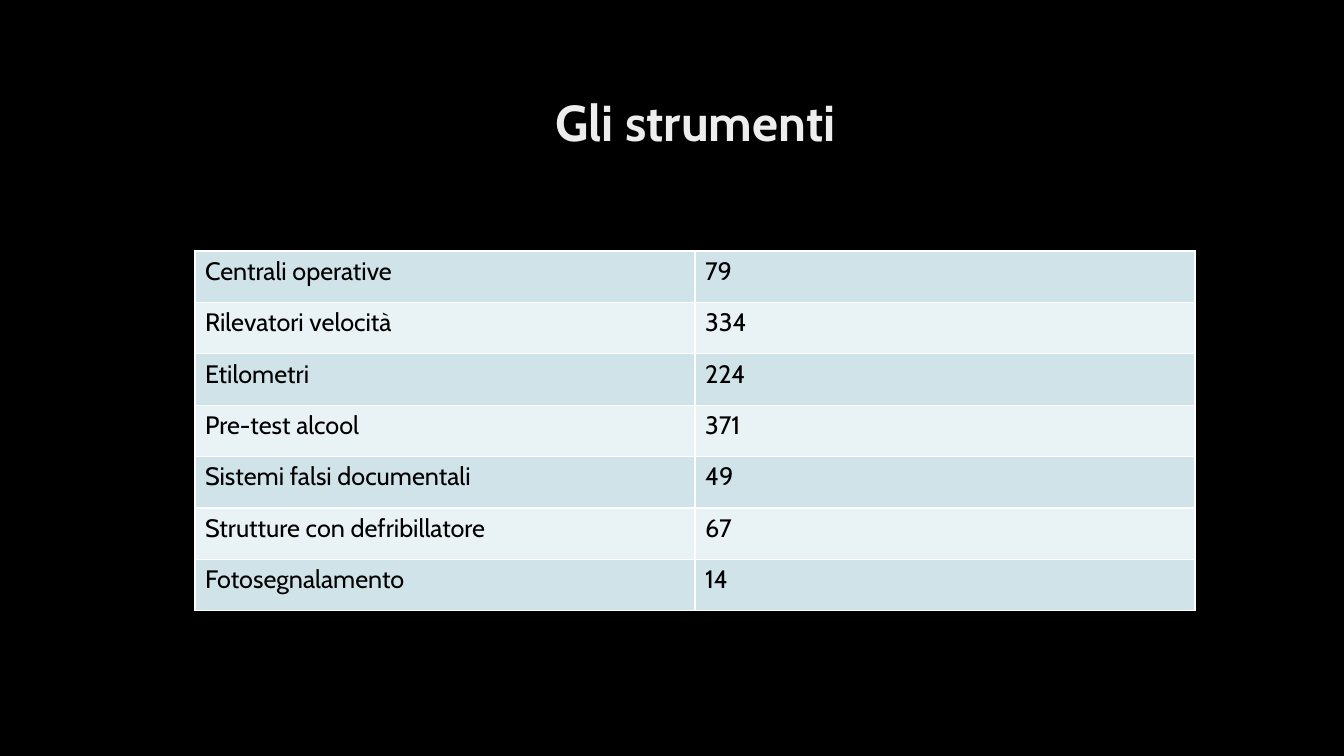
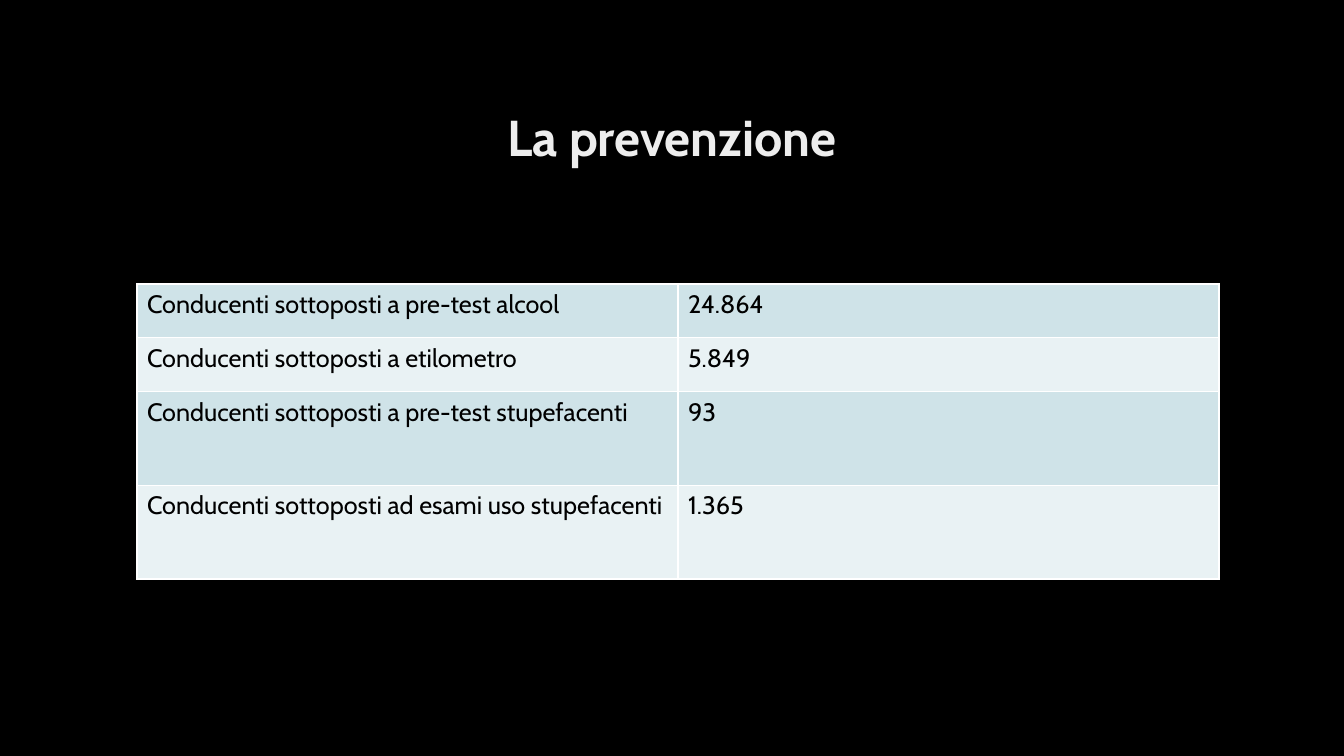
"""Two slides, each with a centred title over a banded two-column table."""
from lxml import etree
from pptx import Presentation
from pptx.dml.color import RGBColor
from pptx.enum.text import MSO_ANCHOR, PP_ALIGN
from pptx.oxml.ns import qn
from pptx.util import Emu, Pt

CENTER = PP_ALIGN.CENTER
TOP = MSO_ANCHOR.TOP
FONT = "Cabin"
COLORS = {
    "background": "000000",
    "title": "EDEDED",
    "text": "000000",
    "border": "FFFFFF",
    "band_dark": "CFE3E8",
    "band_light": "E9F2F4",
}
BANDS = ("band_dark", "band_light")
SLIDES = [
    {
        "title": "Gli strumenti",
        "title_box": (511, 93, 369, 66),
        "table_box": (195, 251, 1000, 360),
        "row_shares": [1] * 7,
        "rows": [
            ("Centrali operative", "79"),
            ("Rilevatori velocità", "334"),
            ("Etilometri", "224"),
            ("Pre-test alcool", "371"),
            ("Sistemi falsi documentali", "49"),
            ("Strutture con defribillatore", "67"),
            ("Fotosegnalamento", "14"),
        ],
    },
    {
        "title": "La prevenzione",
        "title_box": (336, 108, 672, 66),
        "table_box": (137, 284, 1082, 295),
        "row_shares": [54, 54, 94, 94],
        "rows": [
            ("Conducenti sottoposti a pre-test alcool", "24.864"),
            ("Conducenti sottoposti a etilometro", "5.849"),
            ("Conducenti sottoposti a pre-test stupefacenti", "93"),
            ("Conducenti sottoposti ad esami uso stupefacenti", "1.365"),
        ],
    },
]


def px(n):
    return Emu(round(n * 914400 / 100.8))


def style(p, size, color, bold=False):
    p.font.name = FONT
    p.font.size = Pt(size)
    p.font.bold = bold
    p.font.color.rgb = RGBColor.from_string(COLORS[color])


prs = Presentation()
prs.slide_width, prs.slide_height = px(1344), px(756)
fill = prs.slide_master.background.fill
fill.solid()
fill.fore_color.rgb = RGBColor.from_string(COLORS["background"])

for content in SLIDES:
    s = prs.slides.add_slide(prs.slide_layouts[5])

    sp = s.shapes.title
    sp.left, sp.top, sp.width, sp.height = map(px, content["title_box"])
    tf = sp.text_frame
    tf.text = content["title"]
    tf.vertical_anchor = TOP
    p = tf.paragraphs[0]
    p.alignment = CENTER
    p.line_spacing = 0.9
    p.space_after = Pt(6)
    style(p, 36, "title", bold=True)

    rows, shares = content["rows"], content["row_shares"]
    left, top, width, height = map(px, content["table_box"])
    table = s.shapes.add_table(len(rows), 2, left, top, width, height).table
    table.first_row = False
    for i, (values, share) in enumerate(zip(rows, shares)):
        table.rows[i].height = Emu(height * share // sum(shares))
        for j, value in enumerate(values):
            cell = table.cell(i, j)
            cell.text = value
            style(cell.text_frame.paragraphs[0], 18, "text")
            tc_pr = cell._tc.get_or_add_tcPr()
            for side in ("lnL", "lnR", "lnT", "lnB"):
                ln = etree.SubElement(tc_pr, qn(f"a:{side}"), w=str(Pt(1)))
                solid = etree.SubElement(ln, qn("a:solidFill"))
                etree.SubElement(solid, qn("a:srgbClr"), val=COLORS["border"])
            cell.fill.solid()
            cell.fill.fore_color.rgb = RGBColor.from_string(COLORS[BANDS[i % 2]])

prs.save("out.pptx")
